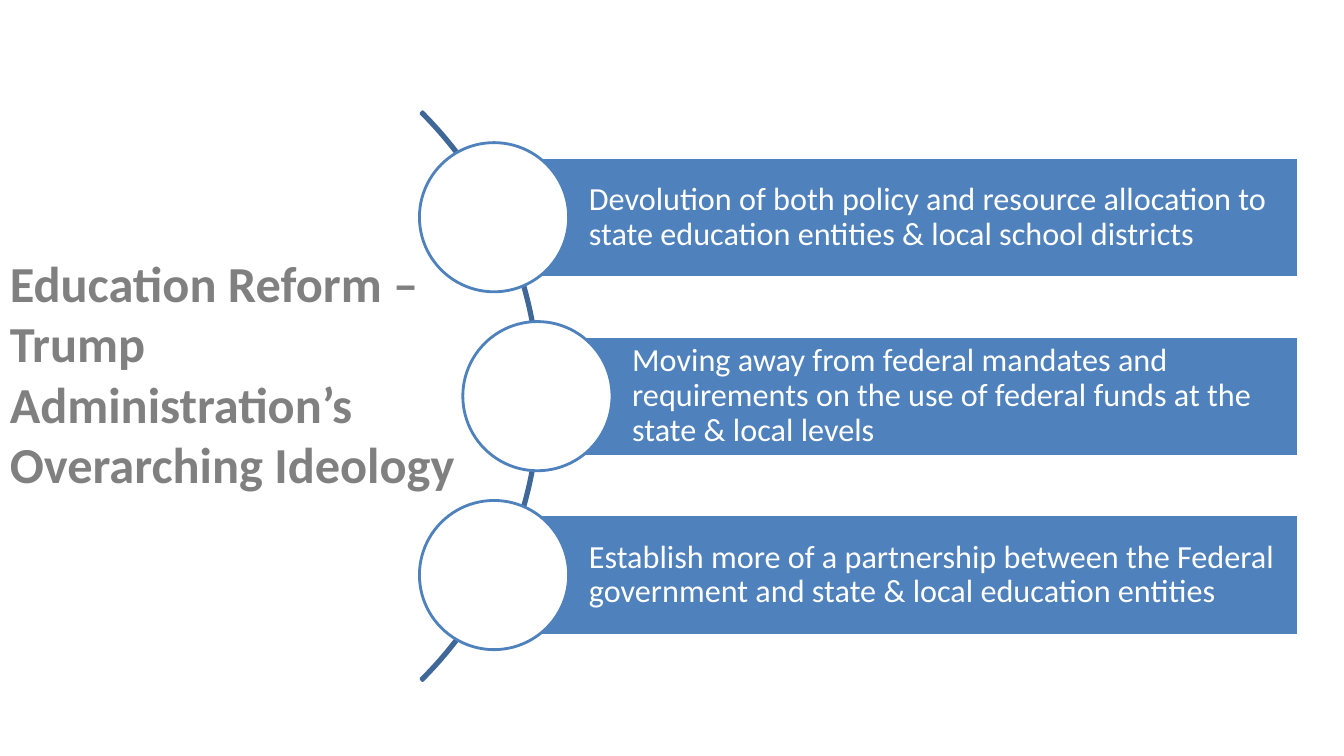
from dataclasses import dataclass

from pptx import Presentation
from pptx.dml.color import RGBColor as Rgb
from pptx.enum.shapes import MSO_SHAPE as Shape
from pptx.enum.text import MSO_ANCHOR as Anchor, MSO_AUTO_SIZE as Auto, PP_ALIGN as Align
from pptx.util import Inches, Pt


@dataclass(frozen=True)
class Theme:
    """Colours, font and type sizes of the slide."""
    blue: str = "4F81BD"
    arc: str = "3F6797"
    white: str = "FFFFFF"
    gray: str = "808080"
    font: str = "Calibri"
    head: float = 36
    body: float = 23
    line: float = 2


THEME = Theme()
TITLE = ["Education Reform –", "Trump", "Administration’s", "Overarching Ideology"]
POINTS = [
    "Devolution of both policy and resource allocation to state education "
    "entities & local school districts",
    "Moving away from federal mandates and requirements on the use of federal "
    "funds at the state & local levels",
    "Establish more of a partnership between the Federal government and "
    "state & local education entities",
]


def write(frame, lines, size, color, bold=False, lead=None):
    """Fill a text frame with one formatted paragraph per line."""
    frame.word_wrap = True
    for i, line in enumerate(lines):
        para = frame.paragraphs[0] if i == 0 else frame.add_paragraph()
        para.alignment = Align.LEFT
        if lead:
            para.line_spacing = lead
        run = para.add_run()
        run.text = line
        run.font.size, run.font.name, run.font.bold = Pt(size), THEME.font, bold
        run.font.color.rgb = Rgb.from_string(color)


def title(slide, box, lines):
    """Write the slide title in the given box."""
    frame = slide.shapes.add_textbox(*map(Inches, box)).text_frame
    write(frame, lines, size=THEME.head, color=THEME.gray, bold=True)
    frame.auto_size = Auto.SHAPE_TO_FIT_TEXT


def draw(slide, kind, box, line, fill=None):
    """Add a flat preset shape in the given box."""
    shape = slide.shapes.add_shape(kind, *map(Inches, box))
    shape.shadow.inherit = False
    if fill:
        shape.fill.solid()
        shape.fill.fore_color.rgb = Rgb.from_string(fill)
    else:
        shape.fill.background()
    shape.line.color.rgb = Rgb.from_string(line)
    shape.line.width = Pt(THEME.line)
    return shape


def point(slide, box, text):
    """Draw a text bar with a circle over its left end."""
    left, top, _, high = box
    bar = draw(slide, Shape.RECTANGLE, box, THEME.white, THEME.blue)
    frame = bar.text_frame
    frame.vertical_anchor = Anchor.MIDDLE
    frame.margin_left = Inches(0.94)
    frame.margin_top = frame.margin_right = frame.margin_bottom = Inches(0.06)
    write(frame, [text], size=THEME.body, color=THEME.white, lead=0.9)
    side = 1.48
    draw(slide, Shape.OVAL, (left - side / 2, top + (high - side) / 2, side, side),
         THEME.blue, THEME.white)


def curve(slide, box, points):
    """Draw the arc and the bars that follow it inside the box."""
    left, top, wide, high = box
    size = 7.98
    arc = draw(slide, Shape.BLOCK_ARC,
               (left - 7.52, top + (high - size) / 2, size, size), THEME.arc)
    for i, value in enumerate((189, 27, 0.003)):
        arc.adjustments[i] = value
    bar = 1.19
    step = (high - bar) / (len(points) - 1)
    for i, text in enumerate(points):
        shift = 0.43 * (i % 2)
        point(slide, (left + shift, top + i * step, wide - shift, bar), text)


def main():
    """Build and save the slide."""
    deck = Presentation()
    deck.slide_width, deck.slide_height = Inches(13.33), Inches(7.5)
    slide = deck.slides.add_slide(deck.slide_layouts[6])
    title(slide, (0, 2.45, 11.53, 2.52), TITLE)
    curve(slide, (4.9, 1.56, 7.98, 4.74), POINTS)
    deck.save("out.pptx")


if __name__ == "__main__":
    main()
